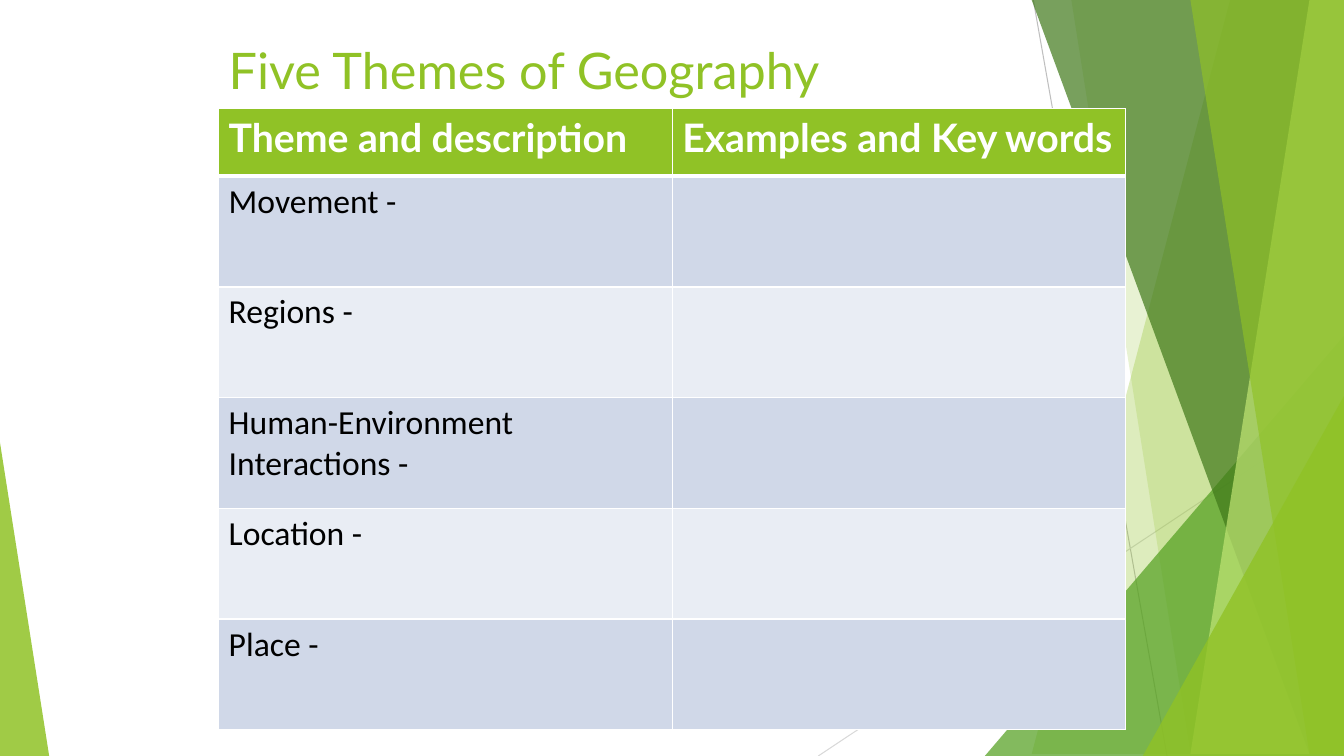
from lxml.etree import SubElement
from pptx import Presentation
from pptx.dml.color import RGBColor
from pptx.enum.shapes import MSO_CONNECTOR as Connector, MSO_SHAPE as Shape
from pptx.enum.text import MSO_ANCHOR as Anchor, MSO_AUTO_SIZE as AutoSize, PP_ALIGN as Align
from pptx.oxml.ns import qn
from pptx.util import Cm, Pt

WIDTH, HEIGHT = 33.87, 19.05
LIME = RGBColor(0x90, 0xC2, 0x26)
GREEN = RGBColor(0x54, 0xA0, 0x21)
FOREST = RGBColor(0x3F, 0x78, 0x19)
PALE_LIME = RGBColor(0xC0, 0xE4, 0x74)
GREY = RGBColor(0xBF, 0xBF, 0xBF)
LIGHT_GREY = RGBColor(0xD9, 0xD9, 0xD9)
BAND_DARK = RGBColor(0xD0, 0xD8, 0xE8)
BAND_LIGHT = RGBColor(0xE9, 0xED, 0xF4)
WHITE = RGBColor(0xFF, 0xFF, 0xFF)
BLACK = RGBColor(0, 0, 0)

HEADINGS = ["Theme and description", "Examples and Key words"]
THEMES = ["Movement -", "Regions -", "Human-Environment Interactions -",
          "Location -", "Place -"]


class ThemeSlide:
    heading_font, body_font = "Lato", "Calibri"

    def __init__(self, slide):
        self.slide = slide
        self.shapes = slide.shapes

    def line(self, x1, y1, x2, y2, color):
        ray = self.shapes.add_connector(
            Connector.STRAIGHT, Cm(x1), Cm(y1), Cm(x2), Cm(y2))
        ray.line.color.rgb = color
        ray.line.width = Pt(0.75)
        SubElement(ray._element.spPr, qn("a:effectLst"))

    def paint(self, facet, color, opacity):
        facet.shadow.inherit = False
        facet.line.fill.background()
        facet.fill.solid()
        facet.fill.fore_color.rgb = color
        rgb = facet._element.spPr.find(f"{qn('a:solidFill')}/{qn('a:srgbClr')}")
        SubElement(rgb, qn("a:alpha"), val=str(opacity * 1000))

    def facet(self, top_x, bottom_x, color, opacity):
        """Fill the slide to the right of a slanted full-height edge."""
        top = -0.02
        outline = self.shapes.build_freeform(top_x, top, scale=Cm(1))
        outline.add_line_segments(
            [(WIDTH, top), (WIDTH, HEIGHT), (bottom_x, HEIGHT)], close=True)
        self.paint(outline.convert_to_shape(), color, opacity)

    def triangle(self, left, top, width, apex, color, opacity):
        """Stand a triangle on the bottom edge of the slide."""
        corner = self.shapes.add_shape(
            Shape.ISOSCELES_TRIANGLE, Cm(left), Cm(top), Cm(width), Cm(HEIGHT - top))
        corner.adjustments[0] = apex
        self.paint(corner, color, opacity)

    def style(self, paragraph, font_name, size, color, bold=False):
        paragraph.alignment = Align.LEFT
        font = paragraph.font
        font.name, font.size, font.bold = font_name, Pt(size), bold
        font.color.rgb = color

    def title(self, wording, left, top, width, height):
        heading = self.shapes.title
        heading.left, heading.top = Cm(left), Cm(top)
        heading.width, heading.height = Cm(width), Cm(height)
        frame = heading.text_frame
        frame.text = wording
        frame.auto_size = AutoSize.NONE
        frame.vertical_anchor = Anchor.MIDDLE
        self.style(frame.paragraphs[0], self.heading_font, 36, LIME)
        self.shapes._spTree.append(heading._element)  # in front of the facets

    def cell(self, cell, fill, borders):
        """Set the fill and the border widths, in points by side."""
        properties = cell._tc.get_or_add_tcPr()
        for side, points in borders.items():
            border = SubElement(properties, qn(f"a:ln{side}"), w=str(Pt(points)))
            solid = SubElement(border, qn("a:solidFill"))
            SubElement(solid, qn("a:srgbClr"), val=str(WHITE))
        cell.fill.solid()
        cell.fill.fore_color.rgb = fill

    def table(self, headings, themes, left, top, column_width, header_height, row_height):
        rows = [headings] + [[theme, ""] for theme in themes]
        grid = self.shapes.add_table(
            len(rows), len(headings), Cm(left), Cm(top), Cm(column_width * len(headings)),
            Cm(header_height + row_height * len(themes))).table
        for column in grid.columns:
            column.width = Cm(column_width)
        for r, row in enumerate(rows):
            grid.rows[r].height = Cm(row_height if r else header_height)
            fill = (BAND_DARK if r % 2 else BAND_LIGHT) if r else LIME
            borders = {"L": 1, "R": 1, "T": 3 if r == 1 else 1, "B": 1 if r else 3}
            for c, wording in enumerate(row):
                cell = grid.cell(r, c)
                self.cell(cell, fill, borders)
                if wording:
                    cell.text = wording
                    look = ((self.body_font, 24, BLACK) if r
                            else (self.heading_font, 28, WHITE, True))
                    self.style(cell.text_frame.paragraphs[0], *look)


def main():
    deck = Presentation()
    deck.slide_width, deck.slide_height = Cm(WIDTH), Cm(HEIGHT)
    title_only = deck.slide_layouts[5]
    page = ThemeSlide(deck.slides.add_slide(title_only))

    page.line(26.04, 0, 29.41, HEIGHT, GREY)
    page.line(WIDTH, 10.24, 20.62, HEIGHT, LIGHT_GREY)
    page.facet(31.19, 25.5, LIME, 30)
    page.facet(26.67, 30.05, LIME, 20)
    page.triangle(24.82, 8.46, 9.05, 1, GREEN, 72)
    page.facet(25.93, 32.79, FOREST, 70)
    page.facet(33.1, 30.28, PALE_LIME, 70)
    page.facet(30.38, 33.48, LIME, 65)
    page.triangle(28.8, 9.98, 5.07, 1, LIME, 80)
    page.triangle(0, 11.15, 1.24, 0, LIME, 85)

    page.title("Five Themes of Geography", 5.51, 0.76, 22.86, 1.98)
    page.table(HEADINGS, THEMES, 5.51, 2.74, 11.43, 1.7, 2.79)
    deck.save("out.pptx")


if __name__ == "__main__":
    main()
